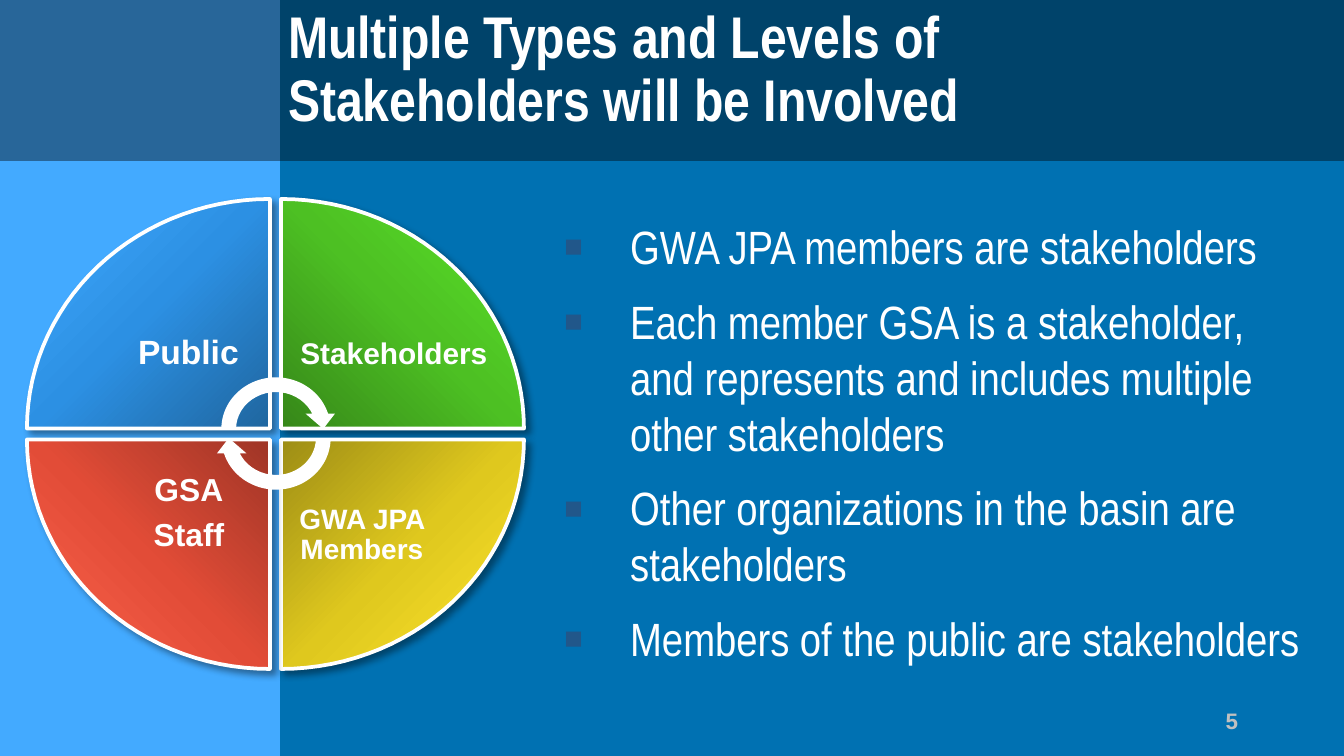
import math

from lxml import etree
from pptx import Presentation
from pptx import util as u
from pptx.dml.color import RGBColor
from pptx.enum import shapes, text
from pptx.oxml import ns, parse_xml

PX = 914400 / 134.4
A = ns.nsdecls("a")
WHITE = "FFFFFF"
SHADOW = (f'<a:effectLst {A}><a:outerShdw blurRad="50800" dist="38100" dir="2700000" '
          'algn="tl" rotWithShape="0"><a:srgbClr val="000000"><a:alpha val="40000"/>'
          '</a:srgbClr></a:outerShdw></a:effectLst>')
BULLETS = [
    "GWA JPA members are stakeholders",
    "Each member GSA is a stakeholder, and represents and includes multiple other stakeholders",
    "Other organizations in the basin are stakeholders",
    "Members of the public are stakeholders",
]
# lines, size, insets (left, top, right, bottom), gradient stops; clockwise from top left
WEDGES = [
    (["Public"], 18, (99, 99, 19, 19), ("1F669F", "2C90E3", "42AAFF")),
    ([], 16, (19, 99, 99, 19), ("368719", "4DC023", "5BE42A")),
    (["GWA JPA Members"], 15, (17, 61, 98, 98), ("9D8D15", "DFC81E", "FFE62D")),
    (["GSA", "Staff"], 17, (98, 17, 17, 98), ("9F3526", "E24C37", "FF644E")),
]


def px(n):
    """Turn px into EMU."""
    return u.Emu(round(n * PX))


def rgb(value):
    """Turn a hex string into a colour."""
    return RGBColor.from_string(value)


def place(sp, box):
    """Move a shape to a px box."""
    for name, n in zip(("left", "top", "width", "height"), box):
        setattr(sp, name, px(n))


def write(tf, lines, size, font="Arial", color=WHITE, bold=True, wrap=True,
          anchor=text.MSO_ANCHOR.TOP, insets=(13, 7, 13, 7), **para):
    """Fill a text frame with one formatted paragraph for each line."""
    tf.auto_size = text.MSO_AUTO_SIZE.NONE
    tf.word_wrap, tf.vertical_anchor = wrap, anchor
    for side, n in zip(("left", "top", "right", "bottom"), insets):
        setattr(tf, f"margin_{side}", px(n))
    gap = para.pop("space_before", u.Pt(0))
    for i, line in enumerate(lines):
        p = tf.paragraphs[0] if i == 0 else tf.add_paragraph()
        p.space_before = gap if i else u.Pt(0)
        for name, value in para.items():
            setattr(p, name, value)
        r = p.add_run()
        r.text = line
        for name, value in {"name": font, "size": u.Pt(size), "bold": bold}.items():
            setattr(r.font, name, value)
        r.font.color.rgb = rgb(color)


def preset(s, kind, box, fill):
    """Add a plain preset shape."""
    sp = s.shapes.add_shape(kind, *map(px, box))
    sp.shadow.inherit = False
    sp.fill.solid()
    sp.fill.fore_color.rgb = rgb(fill)
    sp.line.fill.background()
    return sp


def bands(s):
    """Draw the side band and the dark header behind the placeholders."""
    side = preset(s, shapes.MSO_SHAPE.RECTANGLE, (0, 0, 280, 756), "43AAFF")
    header = preset(s, shapes.MSO_SHAPE.RECTANGLE, (0, 0, 1344, 161), "000000")
    clr = header.element.spPr.find(".//" + ns.qn("a:srgbClr"))
    etree.SubElement(clr, ns.qn("a:alpha")).set("val", "40000")
    for sp in (side, header):
        s.shapes.title.element.addprevious(sp.element)


def heading(s, box):
    """Write the slide title with a text shadow."""
    sp = s.shapes.title
    place(sp, box)
    write(sp.text_frame, ["Multiple Types and Levels of Stakeholders will be Involved"], 31.5,
          "Arial Narrow", anchor=text.MSO_ANCHOR.MIDDLE, line_spacing=0.9,
          alignment=text.PP_ALIGN.LEFT)
    rpr = sp.text_frame.paragraphs[0].runs[0].font._element
    rpr.find(ns.qn("a:solidFill")).addnext(parse_xml(SHADOW))


def bullet_list(s, box):
    """Write the body list with square bullets."""
    sp = s.placeholders[1]
    place(sp, box)
    write(sp.text_frame, BULLETS, 25, "Arial Narrow", bold=False, space_before=u.Pt(10))
    for p in sp.text_frame.paragraphs:
        ppr = p._p.get_or_add_pPr()
        ppr.set("marL", str(u.Inches(0.5)))
        ppr.set("indent", str(-u.Inches(0.5)))
        for xml in (f'<a:buClr {A}><a:srgbClr val="21578A"/></a:buClr>',
                    f'<a:buSzPct {A} val="130000"/>',
                    f'<a:buFont {A} typeface="Arial"/>',
                    f'<a:buChar {A} char="▪"/>'):
            ppr.append(parse_xml(xml))


def wedge(s, box, i, lines, size, insets, stops):
    """Draw quarter i of the wheel, clockwise from top left."""
    x, y, w, h = box
    cx, cy = x + w * (i in (0, 3)), y + h * (i in (0, 1))
    arc = [math.radians(180 + 90 * i + 3 * k) for k in range(31)]
    fb = s.shapes.build_freeform(round(cx * PX), round(cy * PX))
    fb.add_line_segments([(round((cx + w * math.cos(t)) * PX), round((cy + h * math.sin(t)) * PX))
                          for t in arc])
    sp = fb.convert_to_shape()
    sp.line.color.rgb, sp.line.width = rgb(WHITE), u.Pt(2)
    gs = "".join(f'<a:gs pos="{k * 50000}"><a:srgbClr val="{c}"/></a:gs>'
                 for k, c in enumerate(stops))
    angle = (225 + 90 * i) % 360 * 60000
    spPr = sp.element.spPr
    spPr.find(ns.qn("a:custGeom")).addnext(parse_xml(
        f'<a:gradFill {A} rotWithShape="1"><a:gsLst>{gs}</a:gsLst>'
        f'<a:lin ang="{angle}" scaled="0"/></a:gradFill>'))
    spPr.append(parse_xml(SHADOW))
    write(sp.text_frame, lines, size, anchor=text.MSO_ANCHOR.MIDDLE, insets=insets,
          alignment=text.PP_ALIGN.CENTER, line_spacing=0.9, space_before=u.Pt(6))


def wheel(s, box):
    """Draw the four wedges, the two turning arrows and the free label."""
    x, y, w, h = box
    gap = 11
    qw, qh = (w - gap) / 2, (h - gap) / 2
    for i, spec in enumerate(WEDGES):
        wedge(s, (x + (qw + gap) * (i in (1, 2)), y + (qh + gap) * (i > 1), qw, qh), i, *spec)
    for dy, turn in ((171, 0), (180, 180)):
        sp = preset(s, shapes.MSO_SHAPE.CIRCULAR_ARROW, (x + 187, y + dy, 124, 118), WHITE)
        sp.rotation = turn
    label(s, (x + 259, y + 133, 216, 46), "Stakeholders", 16, wrap=False,
          alignment=text.PP_ALIGN.CENTER, line_spacing=0.9)


def label(s, box, line, size, **style):
    """Add a one-line text box."""
    write(s.shapes.add_textbox(*map(px, box)).text_frame, [line], size, **style)


def main():
    """Build and save the slide."""
    prs = Presentation()
    prs.slide_width, prs.slide_height = px(1344), px(756)
    s = prs.slides.add_slide(prs.slide_layouts[1])
    s.background.fill.solid()
    s.background.fill.fore_color.rgb = rgb("0071B2")
    bands(s)
    heading(s, (275, 5, 727, 132))
    bullet_list(s, (550, 211, 767, 454))
    wheel(s, (27, 199, 497, 470))
    label(s, (949, 700, 302, 40), "5", 12, color="C0C0C0", alignment=text.PP_ALIGN.RIGHT)
    prs.save("out.pptx")


if __name__ == "__main__":
    main()
